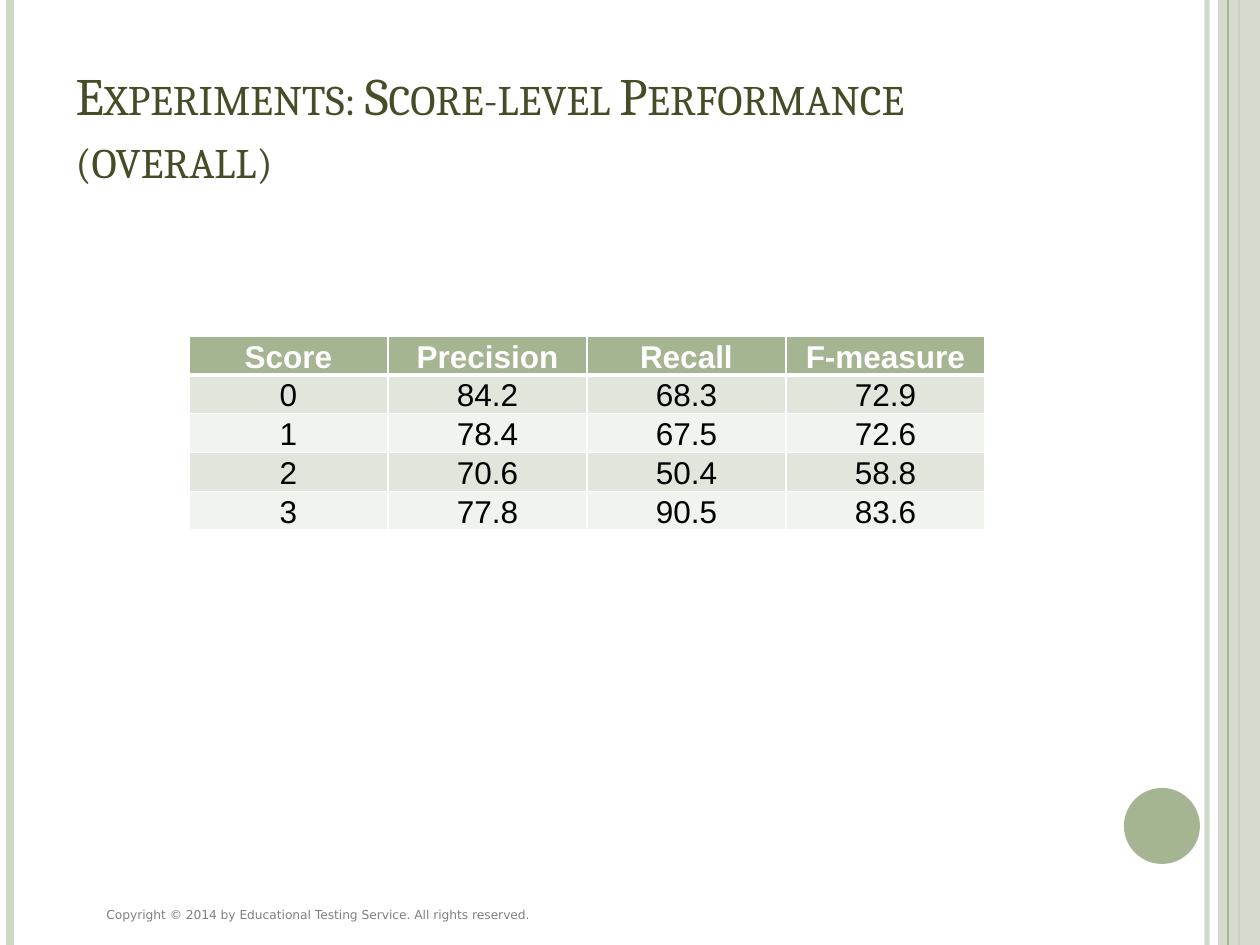
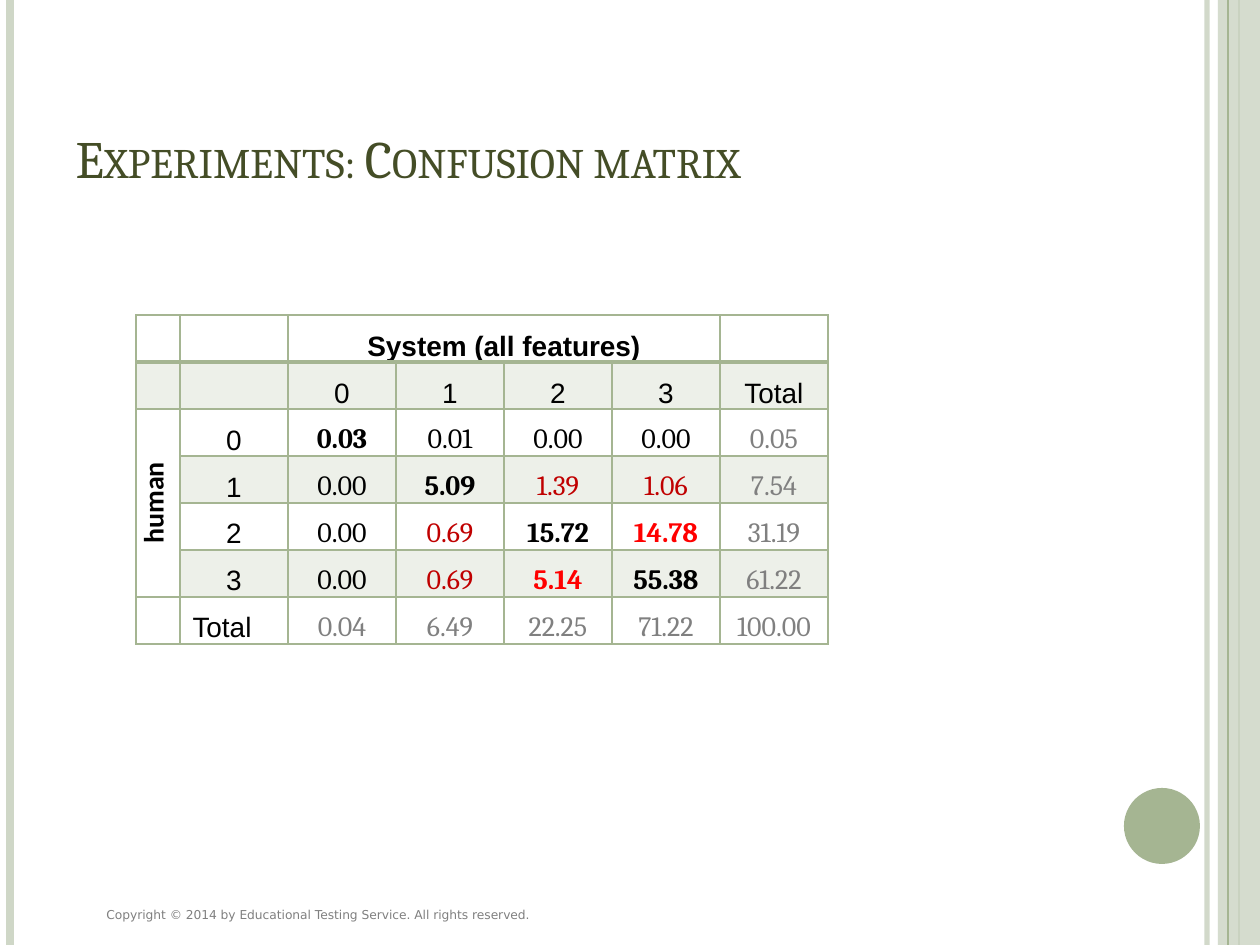
from dataclasses import dataclass
from typing import Callable, NamedTuple

from lxml.etree import SubElement
from pptx import Presentation
from pptx.dml.color import RGBColor
from pptx.enum.shapes import MSO_CONNECTOR, MSO_SHAPE
from pptx.enum.text import MSO_ANCHOR, MSO_AUTO_SIZE, PP_ALIGN
from pptx.oxml.ns import qn
from pptx.util import Emu, Pt

PX_PER_INCH = 126
WIDTH, HEIGHT = 1260, 945
TITLE_ONLY = 5

WHITE = RGBColor(0xFF, 0xFF, 0xFF)
BLACK = RGBColor(0x00, 0x00, 0x00)
GREY = RGBColor(0x80, 0x80, 0x80)
OLIVE = RGBColor(0x44, 0x4D, 0x26)
SAGE = RGBColor(0xA5, 0xB5, 0x92)
PALE_SAGE = RGBColor(0xCF, 0xD7, 0xC7)
BAND_DARK = RGBColor(0xE1, 0xE5, 0xDC)
BAND_LIGHT = RGBColor(0xF0, 0xF3, 0xEE)
DARK_RED = RGBColor(0xC0, 0x00, 0x00)
RED = RGBColor(0xFF, 0x00, 0x00)

TITLE_SIZE = 30
COPYRIGHT = "Copyright © 2014 by Educational Testing Service. All rights reserved."


class Box(NamedTuple):
    left: int
    top: int
    width: int
    height: int


class Rule(NamedTuple):
    x: int
    color: RGBColor
    weight: float
    opacity: int = 100


class Panel(NamedTuple):
    preset: MSO_SHAPE
    box: Box
    color: RGBColor
    opacity: int = 100


class CellStyle(NamedTuple):
    font: str = "Arial"
    color: RGBColor = BLACK
    bold: bool = False
    fill: RGBColor | None = None
    opacity: int = 100
    vert: str = "horz"
    pad_right: int = 1


class Span(NamedTuple):
    row: int
    col: int
    last_row: int
    last_col: int


@dataclass(frozen=True)
class TableSpec:
    box: Box
    col_widths: list[int]
    row_height: int
    size: int
    border: RGBColor
    header_rule: float
    rows: list[list[str]]
    style: Callable[[int, int, str], CellStyle]
    spans: tuple[Span, ...] = ()


DECOR = [
    Rule(1207, PALE_SAGE, 3, 93),
    Rule(10, PALE_SAGE, 4.5),
    Rule(1239, SAGE, 1.5),
    Panel(MSO_SHAPE.RECTANGLE, Box(1218, 0, 42, HEIGHT), PALE_SAGE, 87),
    Rule(1228, SAGE, 0.75),
    Panel(MSO_SHAPE.OVAL, Box(1124, 788, 76, 76), SAGE),
]
TITLE_BOX = Box(63, 38, 1029, 157)
FOOTER_BOX = Box(94, 901, 788, 28)


def px(n: float) -> Emu:
    return Emu(round(n * 914400 / PX_PER_INCH))


def set_attrs(obj, values: dict) -> None:
    for name, value in values.items():
        setattr(obj, name, value)


def set_opacity(element, percent: int) -> None:
    if percent < 100:
        color = element.find(f".//{qn('a:srgbClr')}")
        SubElement(color, qn("a:alpha"), val=str(percent * 1000))


def format_run(r, font: str, size: float, color: RGBColor, bold: bool = False) -> None:
    set_attrs(r.font, {"name": font, "size": Pt(size), "bold": bold})
    r.font.color.rgb = color


def draw_rule(s, rule: Rule) -> None:
    line = s.shapes.add_connector(MSO_CONNECTOR.STRAIGHT, px(rule.x), 0, px(rule.x), px(HEIGHT))
    line.line.color.rgb = rule.color
    line.line.width = Pt(rule.weight)
    sp_pr = line._element.spPr
    set_opacity(sp_pr, rule.opacity)
    SubElement(sp_pr, qn("a:effectLst"))


def draw_panel(s, panel: Panel) -> None:
    sp = s.shapes.add_shape(panel.preset, *map(px, panel.box))
    sp.shadow.inherit = False
    sp.fill.solid()
    sp.fill.fore_color.rgb = panel.color
    sp.line.fill.background()
    set_opacity(sp._element.spPr, panel.opacity)


def draw_footer(s) -> None:
    tf = s.shapes.add_textbox(*map(px, FOOTER_BOX)).text_frame
    tf.word_wrap = True
    r = tf.paragraphs[0].add_run()
    r.text = COPYRIGHT
    format_run(r, "DejaVu Sans", 7, GREY)


def draw_title(s, text: str) -> None:
    sp = s.shapes.title
    set_attrs(sp, dict(zip(Box._fields, map(px, TITLE_BOX))))
    tf = sp.text_frame
    set_attrs(tf, {
        "vertical_anchor": MSO_ANCHOR.BOTTOM,
        "auto_size": MSO_AUTO_SIZE.NONE,
        "word_wrap": True,
    })
    p = tf.paragraphs[0]
    p.text = text
    p.alignment = PP_ALIGN.LEFT
    for r in p.runs:
        format_run(r, "Cambria", TITLE_SIZE, OLIVE)
        r._r.get_or_add_rPr().set("cap", "small")
    for br in p._p.findall(qn("a:br")):
        SubElement(br, qn("a:rPr"), sz=str(TITLE_SIZE * 100))


def set_border(cell, side: str, color: RGBColor, weight: float) -> None:
    tc_pr = cell._tc.get_or_add_tcPr()
    ln = SubElement(tc_pr, qn(f"a:ln{side}"), w=str(Pt(weight)))
    fill = SubElement(ln, qn("a:solidFill"))
    SubElement(fill, qn("a:srgbClr"), val=str(color))


def format_cell(cell, text: str, row: int, col: int, spec: TableSpec) -> None:
    style = spec.style(row, col, text)
    set_attrs(cell, {
        "vertical_anchor": MSO_ANCHOR.BOTTOM,
        "margin_left": px(1),
        "margin_top": px(1),
        "margin_right": px(style.pad_right),
        "margin_bottom": 0,
    })
    tc_pr = cell._tc.get_or_add_tcPr()
    tc_pr.set("vert", style.vert)
    ruled_side = {0: "B", 1: "T"}.get(row)
    for side in "LRTB":
        set_border(cell, side, spec.border, spec.header_rule if side == ruled_side else 1)
    if style.fill is None:
        cell.fill.background()
    else:
        cell.fill.solid()
        cell.fill.fore_color.rgb = style.fill
        set_opacity(tc_pr.find(qn("a:solidFill")), style.opacity)
    if text:
        p = cell.text_frame.paragraphs[0]
        p.alignment = PP_ALIGN.CENTER
        r = p.add_run()
        r.text = text
        format_run(r, style.font, spec.size, style.color, style.bold)


def draw_table(s, spec: TableSpec) -> None:
    frame = s.shapes.add_table(len(spec.rows), len(spec.col_widths), *map(px, spec.box))
    table = frame.table
    set_attrs(table, {"first_row": False, "horz_banding": False})
    for column, width in zip(table.columns, spec.col_widths):
        column.width = px(width)
    for row in table.rows:
        row.height = px(spec.row_height)
    for i, texts in enumerate(spec.rows):
        for j, text in enumerate(texts):
            format_cell(table.cell(i, j), text, i, j, spec)
    for span in spec.spans:
        table.cell(span.row, span.col).merge(table.cell(span.last_row, span.last_col))


def score_style(row: int, col: int, text: str) -> CellStyle:
    if row == 0:
        return CellStyle(color=WHITE, bold=True, fill=SAGE)
    return CellStyle(fill=BAND_DARK if row % 2 else BAND_LIGHT)


def matrix_style(row: int, col: int, text: str) -> CellStyle:
    if row == 0:
        return CellStyle(bold=True)
    if (row, col) == (2, 0):
        return CellStyle(font="Calibri", bold=True, vert="vert270")
    band = SAGE if row % 2 and (col > 0 or row == 1) else None
    if row == 1 or col < 2:
        return CellStyle(fill=band, opacity=20, pad_right=25 if (row, col) == (6, 1) else 1)
    color, bold = BLACK, row == col
    if row == 6 or col == 6:
        color, bold = GREY, False
    elif not bold and float(text) > 5:
        color, bold = RED, True
    elif not bold and float(text) > 0.5:
        color = DARK_RED
    return CellStyle("Cambria", color, bold, band, 20)


SCORES = TableSpec(
    Box(189, 336, 796, 194), [199] * 4, 25, 18, WHITE, 3,
    [
        ["Score", "Precision", "Recall", "F-measure"],
        ["0", "84.2", "68.3", "72.9"],
        ["1", "78.4", "67.5", "72.6"],
        ["2", "70.6", "50.4", "58.8"],
        ["3", "77.8", "90.5", "83.6"],
    ],
    score_style,
)
CONFUSION = TableSpec(
    Box(136, 315, 692, 329), [44] + [108] * 6, 47, 16, SAGE, 2,
    [
        ["", "", "System (all features)", "", "", "", ""],
        ["", "", "0", "1", "2", "3", "Total"],
        ["human", "0", "0.03", "0.01", "0.00", "0.00", "0.05"],
        ["", "1", "0.00", "5.09", "1.39", "1.06", "7.54"],
        ["", "2", "0.00", "0.69", "15.72", "14.78", "31.19"],
        ["", "3", "0.00", "0.69", "5.14", "55.38", "61.22"],
        ["", "Total", "0.04", "6.49", "22.25", "71.22", "100.00"],
    ],
    matrix_style,
    (Span(0, 2, 0, 5), Span(2, 0, 5, 0)),
)
SLIDES = [
    ("Experiments: Score-level Performance\v(overall)", SCORES),
    ("Experiments: Confusion matrix", CONFUSION),
]


def main() -> None:
    prs = Presentation()
    set_attrs(prs, {"slide_width": px(WIDTH), "slide_height": px(HEIGHT)})
    for title, spec in SLIDES:
        s = prs.slides.add_slide(prs.slide_layouts[TITLE_ONLY])
        for item in DECOR:
            draw_rule(s, item) if isinstance(item, Rule) else draw_panel(s, item)
        draw_footer(s)
        draw_title(s, title)
        draw_table(s, spec)
    prs.save("out.pptx")


if __name__ == "__main__":
    main()
